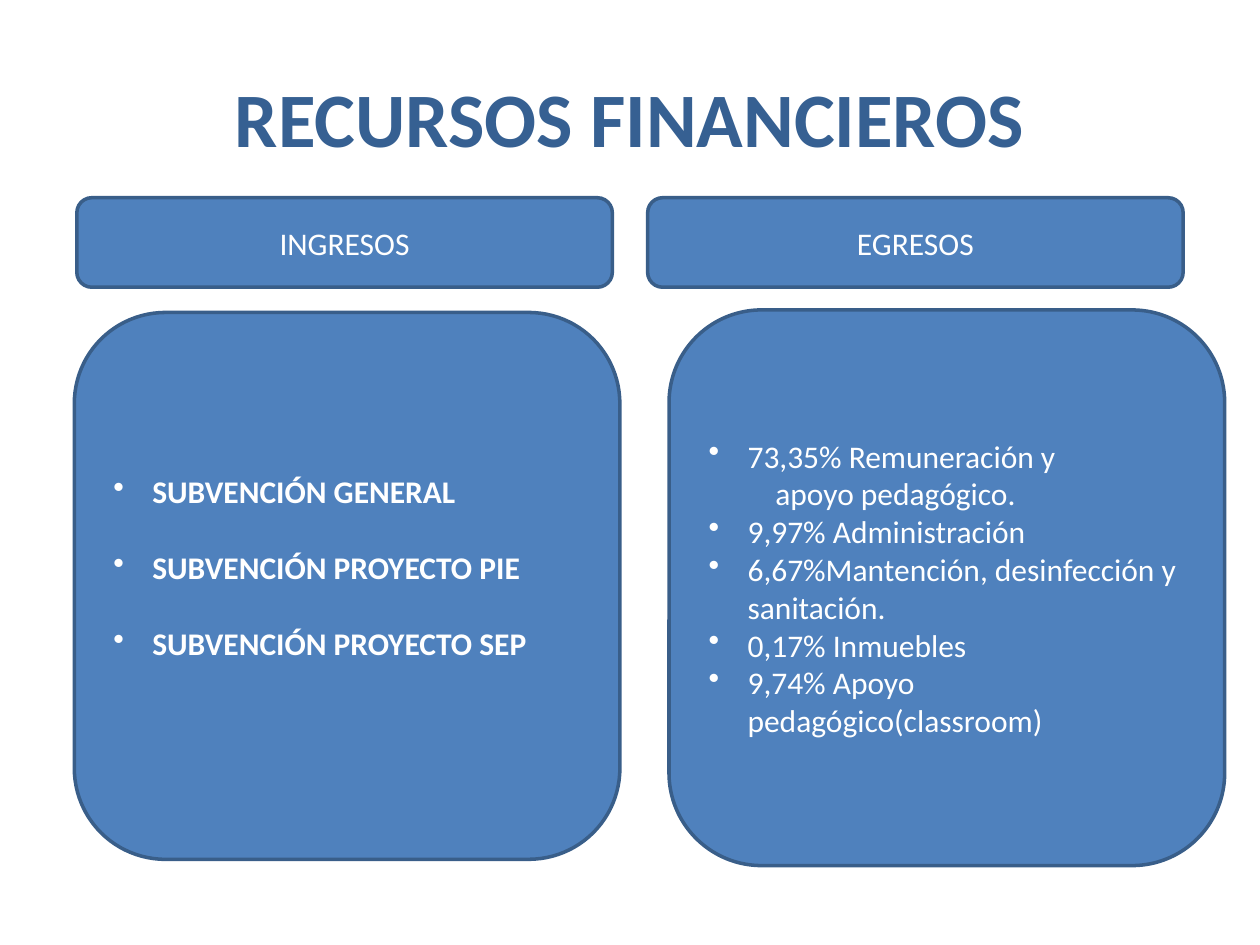
import pptx
import pptx.util
import pptx.dml.color
import pptx.enum.shapes
import pptx.enum.text
import lxml.etree

THEME = {
    "font": "Calibri",
    "title": "366092",
    "fill": "4F81BD",
    "line": "395E89",
    "text": "FFFFFF",
    "title_size": 44,
    "body_size": 18,
    "line_width": 2,
}

SLIDE_WIDTH, SLIDE_HEIGHT = 10, 7.5
MARGIN = 6.1
HEADING_WIDTH = 42.5
HEADING_TOP, HEADING_HEIGHT = 20.93, 9.47
BULLET_INDENT = 0.31
CONTINUATION_INDENT = 0.53

TITLE = "RECURSOS FINANCIEROS"
TITLE_AREA = (5, 4, 90, 16.67)

COLUMNS = [
    {
        "heading": "INGRESOS",
        "items": [
            ("SUBVENCIÓN GENERAL", True),
            ("SUBVENCIÓN PROYECTO PIE", True),
            ("SUBVENCIÓN PROYECTO SEP", True),
        ],
        "panel": (5.9, 33.07, 43.3, 57.87),
        "format": {"bold": True, "gap": 22, "bottom": 0.35},
    },
    {
        "heading": "EGRESOS",
        "items": [
            ("73,35% Remuneración y", True),
            ("apoyo pedagógico.", False),
            ("9,97% Administración", True),
            ("6,67%Mantención, desinfección y sanitación.", True),
            ("0,17% Inmuebles", True),
            ("9,74% Apoyo pedagógico(classroom)", True),
        ],
        "panel": (53.1, 32.8, 44.1, 58.8),
        "format": {},
    },
]


def color(name):
    return pptx.dml.color.RGBColor.from_string(THEME[name])


def place(area):
    left, top, width, height = area
    return [
        pptx.util.Inches(share * side / 100)
        for share, side in zip(
            (left, top, width, height),
            (SLIDE_WIDTH, SLIDE_HEIGHT, SLIDE_WIDTH, SLIDE_HEIGHT),
        )
    ]


def indent(paragraph, bulleted):
    properties = paragraph._p.get_or_add_pPr()
    left = BULLET_INDENT if bulleted else CONTINUATION_INDENT
    properties.set("marL", str(pptx.util.Inches(left)))
    if bulleted:
        properties.set("indent", str(pptx.util.Inches(-BULLET_INDENT)))
        bullet = lxml.etree.SubElement(properties, pptx.oxml.ns.qn("a:buChar"))
        bullet.set("char", "•")


def write(shape, lines, *, size="body_size", ink="text", bold=False,
          listed=False, gap=0, bottom=0.05):
    frame = shape.text_frame
    frame.word_wrap = True
    frame.vertical_anchor = pptx.enum.text.MSO_ANCHOR.MIDDLE
    frame.margin_bottom = pptx.util.Inches(bottom)
    align = pptx.enum.text.PP_ALIGN
    for number, (words, bulleted) in enumerate(lines):
        paragraph = frame.add_paragraph() if number else frame.paragraphs[0]
        paragraph.alignment = align.LEFT if listed else align.CENTER
        if number < len(lines) - 1:
            paragraph.space_after = pptx.util.Pt(gap)
        if listed:
            indent(paragraph, bulleted)
        run = paragraph.add_run()
        run.text = words
        run.font.name = THEME["font"]
        run.font.size = pptx.util.Pt(THEME[size])
        run.font.bold = bold
        run.font.color.rgb = color(ink)


def add_box(slide, area):
    box = slide.shapes.add_shape(
        pptx.enum.shapes.MSO_SHAPE.ROUNDED_RECTANGLE, *place(area))
    box.shadow.inherit = False
    box.fill.solid()
    box.fill.fore_color.rgb = color("fill")
    box.line.color.rgb = color("line")
    box.line.width = pptx.util.Pt(THEME["line_width"])
    return box


def main():
    deck = pptx.Presentation()
    deck.slide_width = pptx.util.Inches(SLIDE_WIDTH)
    deck.slide_height = pptx.util.Inches(SLIDE_HEIGHT)
    slide = deck.slides.add_slide(deck.slide_layouts[6])

    title = slide.shapes.add_textbox(*place(TITLE_AREA))
    write(title, [(TITLE, False)], size="title_size", ink="title", bold=True)

    heading_step = 100 - 2 * MARGIN - HEADING_WIDTH
    for number, column in enumerate(COLUMNS):
        panel = add_box(slide, column["panel"])
        write(panel, column["items"], listed=True, **column["format"])
        heading = add_box(slide, (MARGIN + number * heading_step, HEADING_TOP,
                                  HEADING_WIDTH, HEADING_HEIGHT))
        write(heading, [(column["heading"], False)])

    deck.save("out.pptx")


if __name__ == "__main__":
    main()
